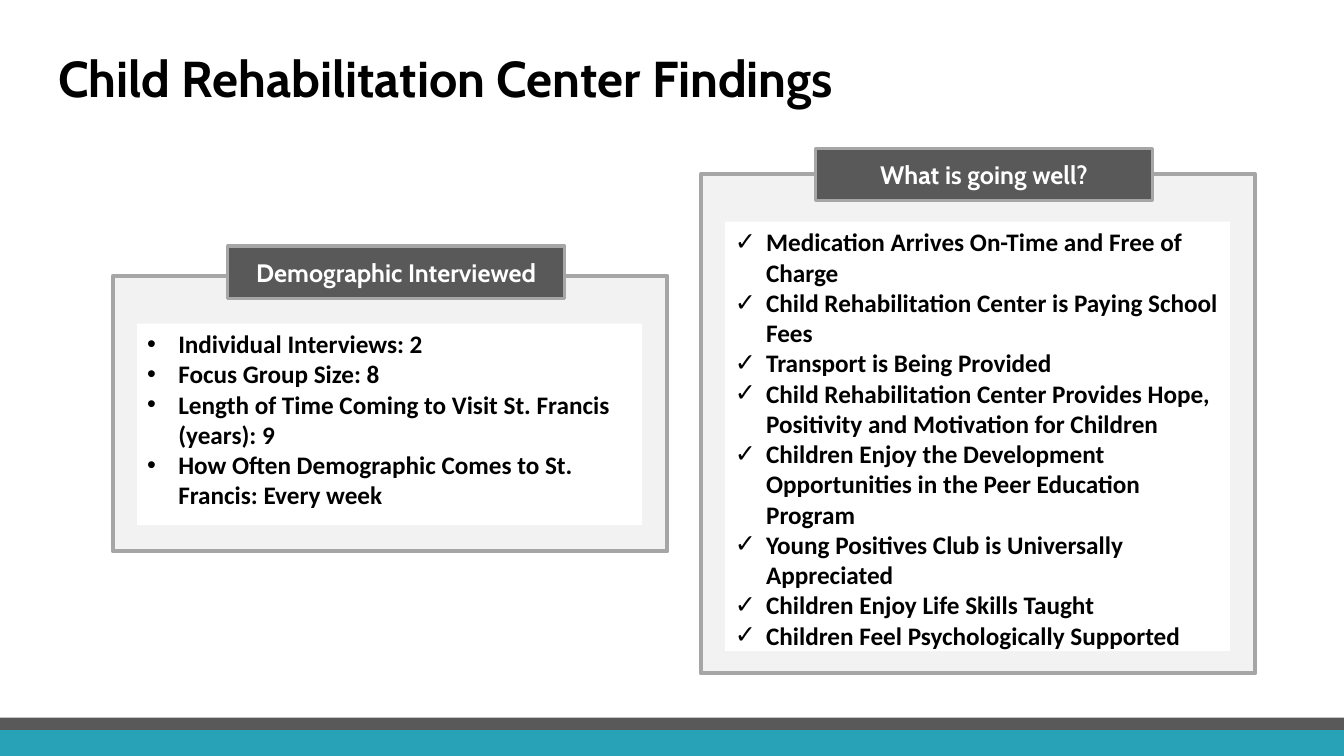
from lxml.etree import SubElement
from pptx import Presentation
from pptx.dml.color import RGBColor
from pptx.enum.shapes import MSO_SHAPE as SHAPE
from pptx.enum.text import MSO_ANCHOR as ANCHOR, PP_ALIGN as ALIGN
from pptx.oxml.ns import qn
from pptx.util import Pt

PX = 9144  # 100 px to the inch
SLIDE_W, SLIDE_H = 1333, 750
TEAL, DARK, GREY, PALE = "28A2B6", "595959", "A6A6A6", "F2F2F2"
WHITE, BLACK = "FFFFFF", "000000"

DEMOGRAPHIC = [
    "Individual Interviews: 2",
    "Focus Group Size: 8",
    "Length of Time Coming to Visit St. Francis (years): 9",
    "How Often Demographic Comes to St. Francis: Every week",
]
GOING_WELL = [
    "Medication Arrives On-Time and Free of Charge",
    "Child Rehabilitation Center is Paying School Fees",
    "Transport is Being Provided",
    "Child Rehabilitation Center Provides Hope, Positivity and Motivation for Children",
    "Children Enjoy the Development Opportunities in the Peer Education Program",
    "Young Positives Club is Universally Appreciated",
    "Children Enjoy Life Skills Taught",
    "Children Feel Psychologically Supported",
]


def px(*lengths):
    return [round(n * PX) for n in lengths]


def rgb(color):
    return RGBColor.from_string(color)


def add_rect(slide, box, fill, line_width=None):
    sp = slide.shapes.add_shape(SHAPE.RECTANGLE, *px(*box))
    sp.shadow.inherit = False
    sp.fill.solid()
    sp.fill.fore_color.rgb = rgb(fill)
    if line_width:
        sp.line.color.rgb = rgb(GREY)
        sp.line.width = Pt(line_width)
    else:
        sp.line.fill.background()
    return sp


def set_frame(sp, anchor):
    tf = sp.text_frame
    tf.word_wrap = True
    tf.vertical_anchor = anchor
    tf.margin_left, tf.margin_right, tf.margin_top, tf.margin_bottom = px(10, 10, 5, 5)
    return tf


def add_run(p, text, font, size, color):
    r = p.add_run()
    r.text = text
    r.font.name, r.font.size, r.font.bold = font, Pt(size), True
    r.font.color.rgb = rgb(color)


def set_bullet(p, char):
    pPr = p._p.get_or_add_pPr()
    indent, = px(31)
    pPr.set("marL", str(indent))
    pPr.set("indent", str(-indent))
    SubElement(pPr, qn("a:buFont")).set("typeface", "Arial")
    SubElement(pPr, qn("a:buChar")).set("char", char)


def add_title(slide, box, text):
    tf = set_frame(slide.shapes.add_textbox(*px(*box)), ANCHOR.MIDDLE)
    p = tf.paragraphs[0]
    p.line_spacing = 0.9
    add_run(p, text, "Cabin", 36, BLACK)


def add_panel(slide, box, heading, rise, items, bullet, foot):
    """Framed list; its heading starts rise above the frame, foot is the gap below the list."""
    x, y, w, h = box
    add_rect(slide, box, PALE, 3)

    body = add_rect(slide, (x + 24, y + 47, 501, h - 47 - foot), WHITE)
    tf = set_frame(body, ANCHOR.TOP)
    for i, item in enumerate(items):
        p = tf.add_paragraph() if i else tf.paragraphs[0]
        p.alignment = ALIGN.LEFT
        set_bullet(p, bullet)
        add_run(p, item, "Calibri", 18, BLACK)

    label = add_rect(slide, (x + 114, y - rise, 334, 52), DARK, 2.25)
    p = set_frame(label, ANCHOR.MIDDLE).paragraphs[0]
    p.alignment = ALIGN.CENTER
    add_run(p, heading, "Cabin", 18, WHITE)


def add_footer(slide, box):
    x, y, w, h = box
    add_rect(slide, (x, y + 7, w, h - 7), TEAL)
    add_rect(slide, (x, y, w, 12), DARK)


def main():
    prs = Presentation()
    prs.slide_width, prs.slide_height = px(SLIDE_W, SLIDE_H)
    slide = prs.slides.add_slide(prs.slide_layouts[6])
    add_footer(slide, (0, 712, SLIDE_W, SLIDE_H - 712))
    add_panel(slide, (695, 173, 550, 495), "What is going well?", 26, GOING_WELL, "✓", 22)
    add_panel(slide, (112, 274, 550, 273), "Demographic Interviewed", 30, DEMOGRAPHIC, "•", 26)
    add_title(slide, (48, 8, 1150, 145), "Child Rehabilitation Center Findings")
    prs.save("out.pptx")


if __name__ == "__main__":
    main()
